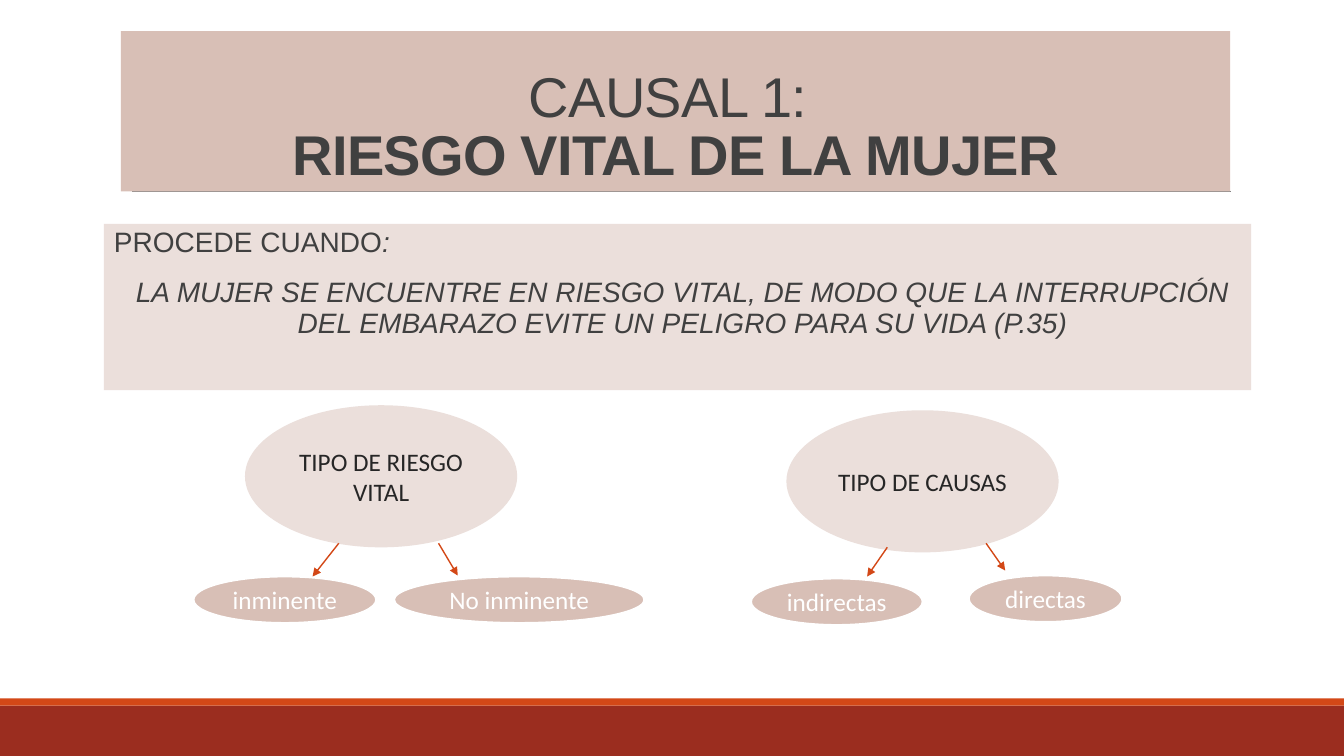
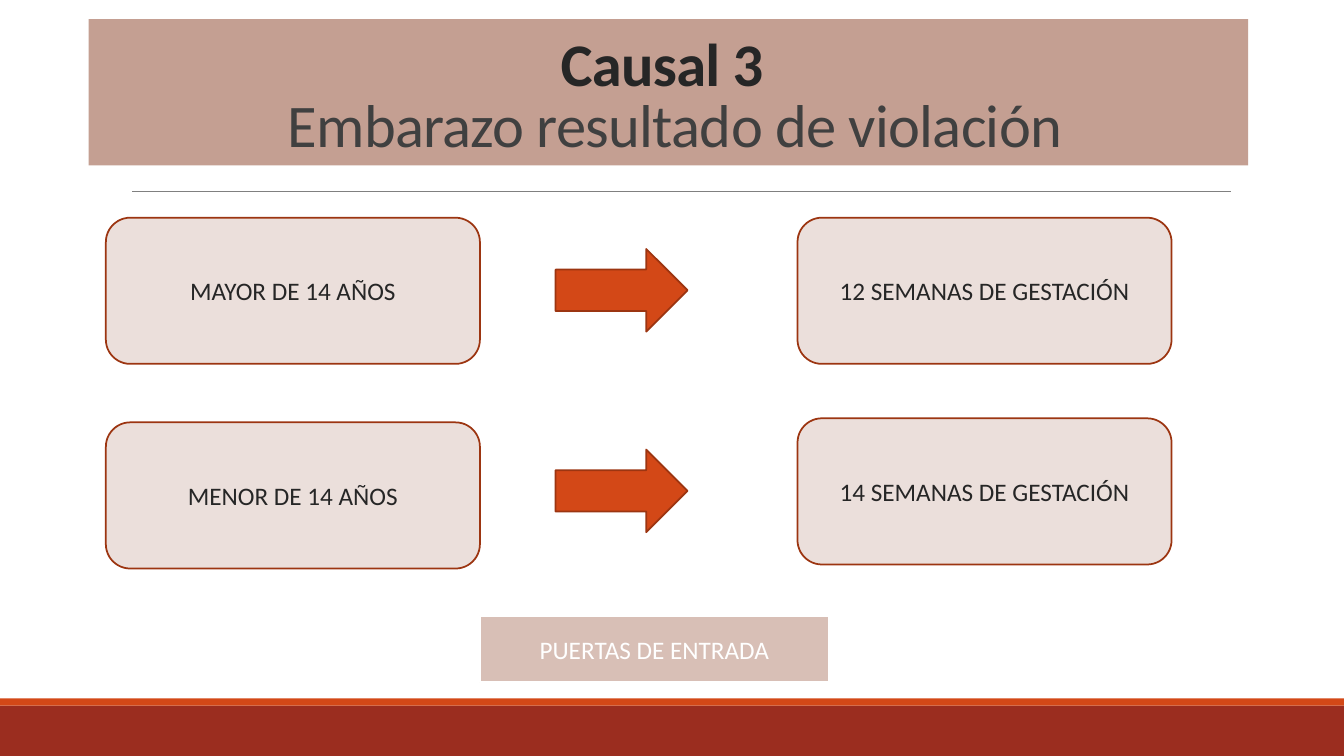
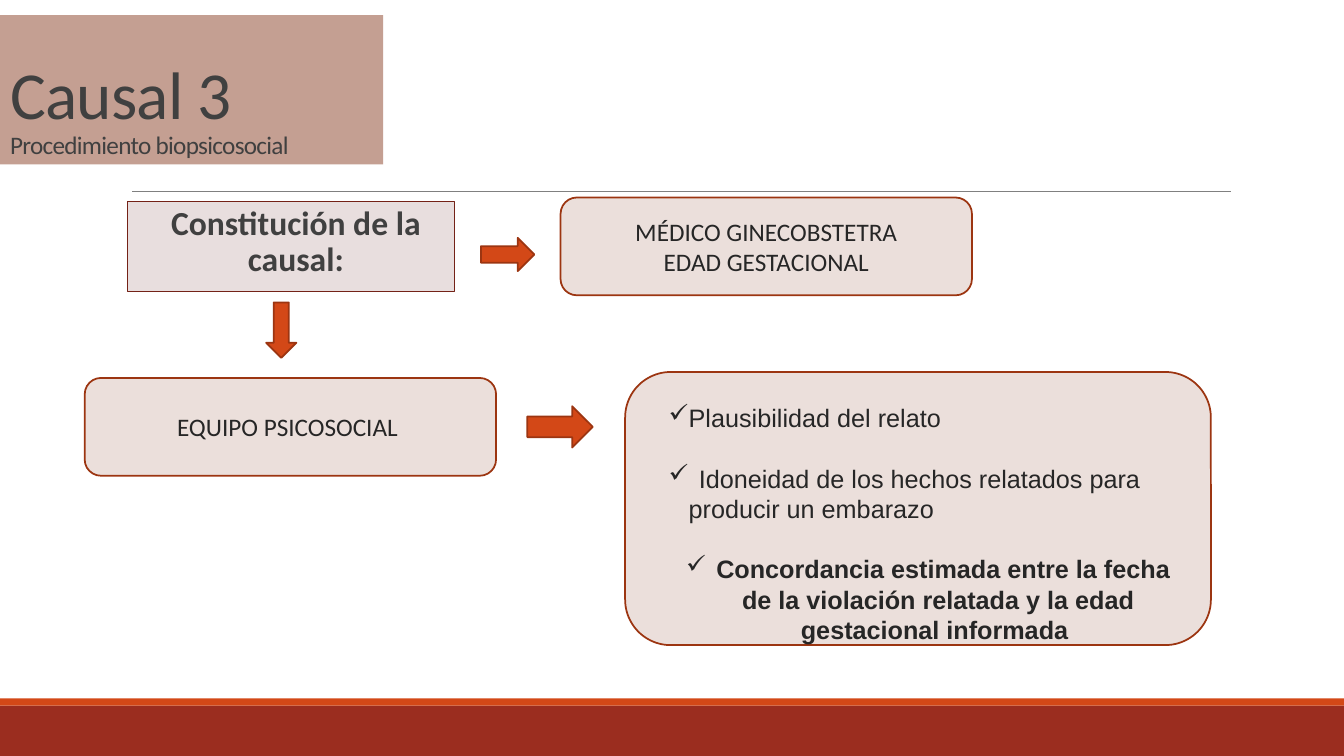
"""Build three slides on the legal grounds: risk to life and rape."""
from copy import deepcopy
from pptx import Presentation
from pptx.dml.color import RGBColor
from pptx.enum.shapes import MSO_CONNECTOR, MSO_SHAPE
from pptx.enum.text import MSO_ANCHOR, MSO_AUTO_SIZE, PP_ALIGN
from pptx.oxml.ns import qn
from pptx.util import Inches, Pt
from lxml.etree import SubElement

HUES = {"band": "9B2D1F", "accent": "D34817", "rule": "808080", "edge": "9C3511",
        "pale": "EBDFDB", "rose": "D8BFB6", "clay": "C49F92", "gray": "E8DEDE",
        "rust": "742217", "text": "404040", "dark": "262626", "white": "FFFFFF"}

TITLES = [
    dict(text="CAUSAL 1: \vRIESGO VITAL DE LA MUJER", box=(1.2, 0.31, 11, 1.59), fill="rose",
         align=PP_ALIGN.CENTER, font="Arial",
         looks=[(40, "text", False), (40, "text", True)]),
    dict(text="Causal 3 \v Embarazo resultado de violación", box=(0.88, 0.19, 11.5, 1.45),
         fill="clay", align=PP_ALIGN.CENTER, font="Calibri",
         looks=[(43.2, "dark", True), (43.2, "text", False)]),
    dict(text="Causal 3 \vProcedimiento biopsicosocial", box=(0, 0.15, 3.8, 1.48),
         fill="clay", align=PP_ALIGN.LEFT, font="Calibri",
         looks=[(48, "text", False), (18, "text", False)]),
]
QUOTE = ("LA MUJER SE ENCUENTRE EN RIESGO VITAL, DE MODO QUE LA INTERRUPCIÓN "
         "DEL EMBARAZO EVITE UN PELIGRO PARA SU VIDA (P.35)")
TYPES = [("TIPO DE RIESGO VITAL", 2.43, 4.02), ("TIPO DE CAUSAS", 7.8, 4.07)]
LINKS = [(3.36, 5.39, 3.1, 5.72), (4.35, 5.39, 4.54, 5.71),
         (8.8, 5.43, 8.6, 5.72), (9.78, 5.39, 9.97, 5.66)]
KINDS = [("directas", 9.61, 5.71, 1.52), ("indirectas", 7.45, 5.74, 1.7),
         ("inminente", 1.92, 5.72, 1.81), ("No inminente", 3.91, 5.72, 2.48)]
AGES = [("MAYOR DE 14 AÑOS", 2.16, "12 SEMANAS DE GESTACIÓN", 2.16),
        ("MENOR DE 14 AÑOS", 4.19, "14 SEMANAS DE GESTACIÓN", 4.15)]
TEAMS = [("MÉDICO GINECOBSTETRA\nEDAD GESTACIONAL", 5.56, 1.96),
         ("EQUIPO PSICOSOCIAL ", 0.84, 3.75)]
ARROWS = [(MSO_SHAPE.RIGHT_ARROW, (4.77, 2.36, 0.53, 0.33)),
          (MSO_SHAPE.DOWN_ARROW, (2.64, 3, 0.3, 0.55)),
          (MSO_SHAPE.RIGHT_ARROW, (5.23, 4.03, 0.65, 0.41))]
CHECKS = ["Plausibilidad del relato",
          "\tIdoneidad de los hechos relatados para producir un embarazo",
          "\tConcordancia estimada entre la fecha de la violación relatada "
          "y la edad gestacional informada "]


def hue(name):
    return RGBColor.from_string(HUES[name])


def paint(shape, fill, line=None, width=1.25):
    shape.fill.solid()
    shape.fill.fore_color.rgb = hue(fill)
    if line:
        shape.line.color.rgb = hue(line)
        shape.line.width = Pt(width)
    else:
        shape.line.fill.background()


def style(run, size, color, font="Calibri", bold=False, italic=False):
    face = run.font
    face.size, face.name, face.bold, face.italic = Pt(size), font, bold, italic
    face.color.rgb = hue(color)


def shape(slide, kind, box, fill, line=None, text="", color="dark"):
    item = slide.shapes.add_shape(kind, *map(Inches, box))
    item.shadow.inherit = False
    paint(item, fill, line)
    if text:
        frame = item.text_frame
        frame.text = text
        frame.vertical_anchor = MSO_ANCHOR.MIDDLE
        for par in frame.paragraphs:
            par.alignment = PP_ALIGN.CENTER
            for run in par.runs:
                style(run, 18, color)
    return item


def line(slide, ends, color, width, arrow=False):
    item = slide.shapes.add_connector(MSO_CONNECTOR.STRAIGHT, *map(Inches, ends))
    item.line.color.rgb = hue(color)
    item.line.width = Pt(width)
    if arrow:
        SubElement(item.line._get_or_add_ln(), qn("a:tailEnd"), type="triangle")
    SubElement(item.element.spPr, qn("a:effectLst"))
    return item


def indent(par, left, hang=0):
    props = par._p.get_or_add_pPr()
    props.set("marL", str(Inches(left)))
    props.set("indent", str(Inches(hang)))
    return props


def body(slide, box, fill, text):
    item = slide.shapes.add_textbox(*map(Inches, box))
    paint(item, fill)
    frame = item.text_frame
    frame.word_wrap = True
    frame.margin_left = frame.margin_right = 0
    frame.text = text
    for par in frame.paragraphs:
        indent(par, 0.1)
        par.alignment = PP_ALIGN.CENTER
        par.line_spacing = 0.9
        par.space_before, par.space_after = Pt(12), Pt(2)
    return item


def head(slide, text, box, fill, align, font, looks):
    item = slide.shapes.title
    item.left, item.top, item.width, item.height = map(Inches, box)
    paint(item, fill)
    frame = item.text_frame
    frame.auto_size = MSO_AUTO_SIZE.NONE
    frame.vertical_anchor = MSO_ANCHOR.BOTTOM
    par = frame.paragraphs[0]
    par.text = text
    par.alignment, par.line_spacing = align, 0.85
    for run, (size, color, bold) in zip(par.runs, looks):
        style(run, size, color, font, bold)
        run.font._element.set("spc", "-50")
    for gap in par._p.findall(qn("a:br")):
        gap.append(deepcopy(gap.getprevious().find(qn("a:rPr"))))


def frame_up(slide, layout):
    parts = [shape(slide, MSO_SHAPE.RECTANGLE, (0, 7, 13.33, 0.5), "band"),
             shape(slide, MSO_SHAPE.RECTANGLE, (0, 6.93, 13.33, 0.07), "accent"),
             line(slide, (1.31, 1.9, 12.21, 1.9), "rule", 0.5)]
    for num, part in enumerate(parts, 20):
        part.element.xpath(".//p:cNvPr")[0].set("id", str(num))
        layout.shapes.element.append(part.element)


def risk(slide):
    frame = body(slide, (1.03, 2.22, 11.38, 1.65), "pale",
                 "PROCEDE CUANDO\n" + QUOTE).text_frame
    lead, quote = frame.paragraphs
    lead.alignment = PP_ALIGN.JUSTIFY
    style(lead.runs[0], 20, "text", "Arial")
    colon = lead.add_run()
    colon.text = ": "
    for run in (colon, quote.runs[0]):
        style(run, 20, "text", "Arial", italic=True)
    for text, left, top in TYPES:
        shape(slide, MSO_SHAPE.OVAL, (left, top, 2.7, 1.41), "pale", None, text)
    for ends in LINKS:
        line(slide, ends, "accent", 1, True)
    for text, left, top, width in KINDS:
        shape(slide, MSO_SHAPE.OVAL, (left, top, width, 0.46), "rose", "white", text, "white")


def terms(slide):
    for age, top, weeks, level in AGES:
        for text, left, y in ((age, 1.05, top), (weeks, 7.91, level)):
            shape(slide, MSO_SHAPE.ROUNDED_RECTANGLE, (left, y, 3.71, 1.45),
                  "pale", "edge", text)
        shape(slide, MSO_SHAPE.RIGHT_ARROW, (5.51, level + 0.31, 1.31, 0.82), "accent", "edge")
    shape(slide, MSO_SHAPE.RECTANGLE, (4.76, 6.11, 3.46, 0.66), "rose", "white",
          "PUERTAS DE ENTRADA", "white")


def steps(slide):
    start = body(slide, (1.26, 2, 3.25, 0.89), "gray", "Constitución de la causal:")
    paint(start, "gray", "rust", 0.75)
    style(start.text_frame.paragraphs[0].runs[0], 24, "text", bold=True)
    for kind, box in ARROWS:
        shape(slide, kind, box, "accent", "edge")
    for text, left, top in TEAMS:
        shape(slide, MSO_SHAPE.ROUNDED_RECTANGLE, (left, top, 4.08, 0.97), "pale", "edge", text)
    panel = shape(slide, MSO_SHAPE.ROUNDED_RECTANGLE, (6.2, 3.69, 5.81, 2.71),
                  "pale", "edge", "\n".join(CHECKS))
    frame = panel.text_frame
    frame.vertical_anchor = MSO_ANCHOR.TOP
    frame.margin_top, frame.margin_bottom = Inches(0.17), 0
    last = len(CHECKS) - 1
    for num, par in enumerate(frame.paragraphs):
        par.alignment = PP_ALIGN.CENTER if num == last else PP_ALIGN.LEFT
        par.space_before = Pt(21.6 if num else 0)
        SubElement(indent(par, 0.4, -0.2), qn("a:buChar"), char="✓")
        for run in par.runs:
            style(run, 18, "dark", "Arial", num == last)


def main():
    deck = Presentation()
    deck.slide_width, deck.slide_height = Inches(13.33), Inches(7.5)
    layout = deck.slide_layouts[5]
    for num, (title, fill) in enumerate(zip(TITLES, (risk, terms, steps))):
        slide = deck.slides.add_slide(layout)
        if num == 0:
            frame_up(slide, layout)
        head(slide, **title)
        fill(slide)
    deck.save("out.pptx")


if __name__ == "__main__":
    main()
